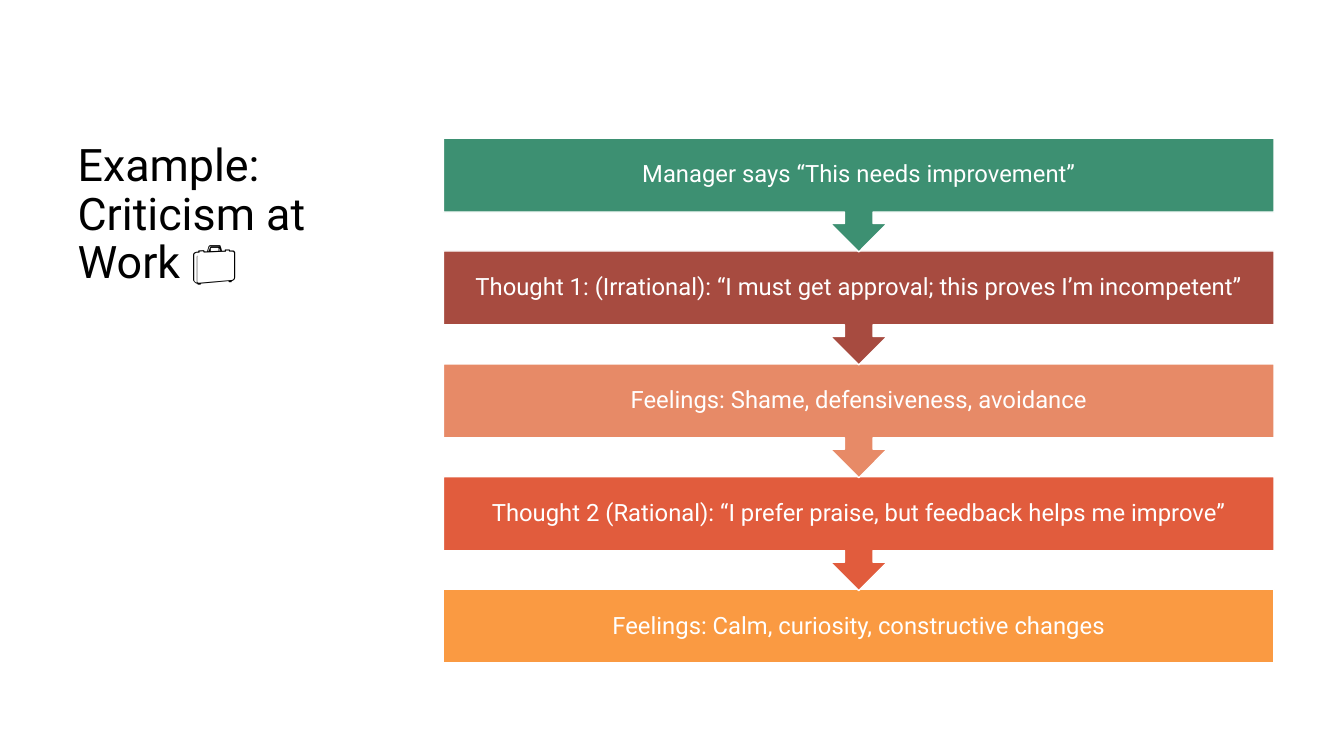
"""Build a slide that follows criticism at work from event to feelings."""
from dataclasses import dataclass

from pptx import Presentation
from pptx.dml.color import RGBColor
from pptx.enum.shapes import MSO_SHAPE
from pptx.enum.text import MSO_ANCHOR, MSO_AUTO_SIZE, PP_ALIGN
from pptx.util import Pt


@dataclass(frozen=True)
class Theme:
    """Hold the colours, font and type sizes."""
    font: str = "Roboto"
    ink: str = "000000"
    paper: str = "FFFFFF"
    green: str = "3D9072"
    brick: str = "A74B40"
    peach: str = "E78A67"
    red: str = "E15C3D"
    amber: str = "FA9A42"
    head: int = 32
    body: int = 17


THEME = Theme()
LEFT, TOP, WIDTH = 316.8, 98.64, 593.28
STEP, TALL, BAR = 80.64, 81.36, 52.56

STEPS = [
    ("Manager says “This needs improvement”", THEME.green),
    ("Thought 1: (Irrational): “I must get approval; this proves I’m incompetent”", THEME.brick),
    ("Feelings: Shame, defensiveness, avoidance", THEME.peach),
    ("Thought 2 (Rational): “I prefer praise, but feedback helps me improve”", THEME.red),
    ("Feelings: Calm, curiosity, constructive changes", THEME.amber),
]


def tint(code):
    """Turn a hex code into a colour."""
    return RGBColor.from_string(code)


def write(shape, text, *, size, color, align, anchor, inset):
    """Put formatted text into a shape."""
    frame = shape.text_frame
    frame.text = text
    frame.word_wrap = True
    frame.auto_size = MSO_AUTO_SIZE.NONE
    frame.vertical_anchor = anchor
    frame.margin_left = frame.margin_right = Pt(inset)
    frame.margin_top = frame.margin_bottom = Pt(inset / 2)
    line = frame.paragraphs[0]
    line.alignment = align
    line.line_spacing = 0.9
    font = line.runs[0].font
    font.name, font.size = THEME.font, Pt(size)
    font.color.rgb = tint(color)


def add_title(slide, text):
    """Place the title at the left."""
    title = slide.shapes.title
    title.left, title.top = Pt(48.24), Pt(TOP)
    title.width, title.height = Pt(228.96), Pt(375.84)
    write(title, text, size=THEME.head, color=THEME.ink,
          align=PP_ALIGN.LEFT, anchor=MSO_ANCHOR.TOP, inset=7.2)


def add_step(slide, row, text, color, last):
    """Draw one bar, with an arrow down unless it is the last."""
    kind = MSO_SHAPE.RECTANGLE if last else MSO_SHAPE.DOWN_ARROW_CALLOUT
    box = slide.shapes.add_shape(kind, Pt(LEFT), Pt(TOP + row * STEP),
                                 Pt(WIDTH), Pt(BAR if last else TALL))
    box.shadow.inherit = False
    box.fill.solid()
    box.fill.fore_color.rgb = tint(color)
    box.line.color.rgb = tint(THEME.paper)
    box.line.width = Pt(1)
    write(box, text, size=THEME.body, color=THEME.paper,
          align=PP_ALIGN.CENTER, anchor=MSO_ANCHOR.MIDDLE, inset=9.36)


def main():
    """Build and save the slide."""
    deck = Presentation()
    deck.slide_width, deck.slide_height = Pt(960), Pt(540)
    slide = deck.slides.add_slide(deck.slide_layouts.get_by_name("Title Only"))
    add_title(slide, "Example: Criticism at Work 💼")
    end = len(STEPS) - 1
    for row, (text, color) in reversed(list(enumerate(STEPS))):
        add_step(slide, row, text, color, row == end)
    deck.save("out.pptx")


if __name__ == "__main__":
    main()
